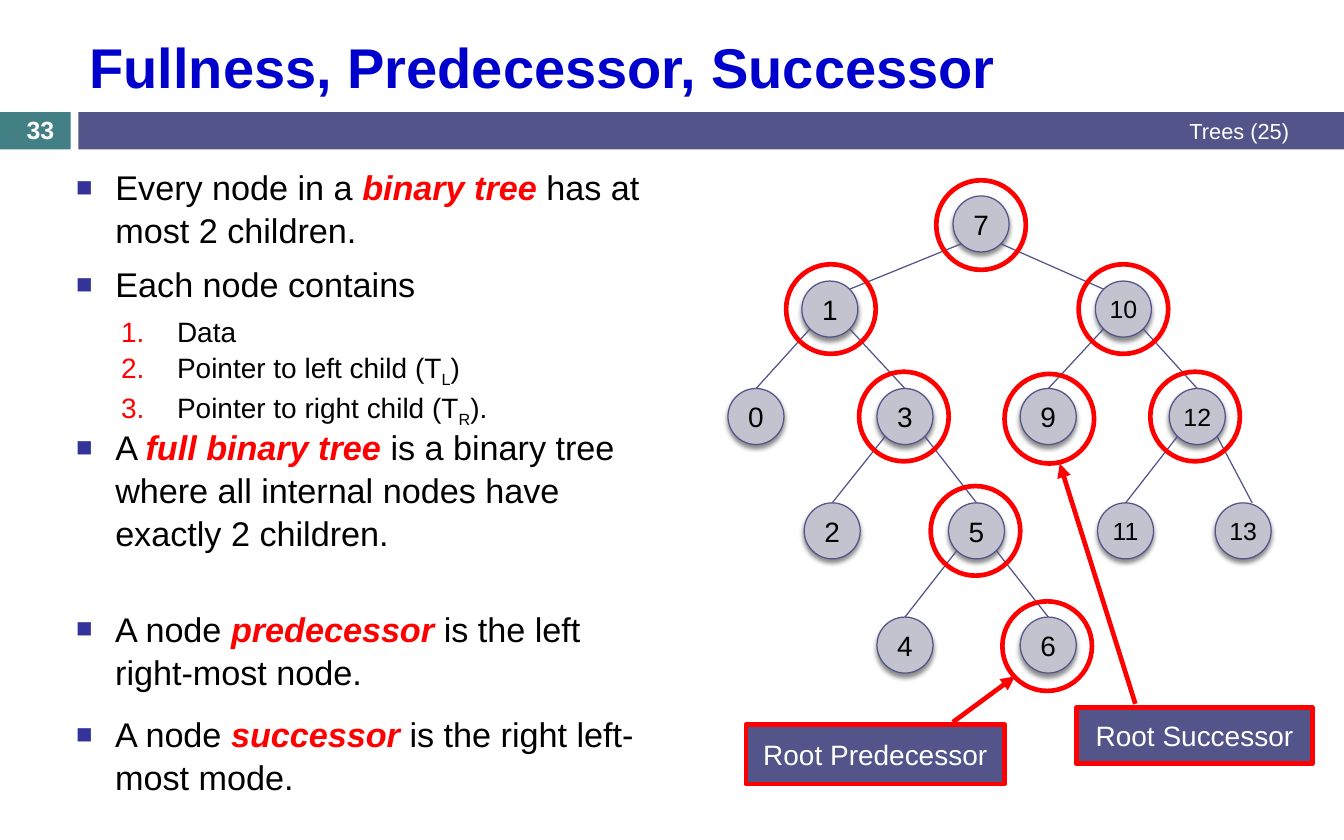
from dataclasses import dataclass
from math import sqrt
from typing import NamedTuple, Optional

from lxml.etree import SubElement
from pptx import Presentation
from pptx.dml.color import RGBColor
from pptx.enum.shapes import MSO_CONNECTOR, MSO_SHAPE
from pptx.enum.text import MSO_ANCHOR, MSO_AUTO_SIZE, PP_ALIGN
from pptx.oxml.ns import qn
from pptx.util import Pt


@dataclass(frozen=True)
class Theme:
    font: str = "Arial"
    title: str = "0000CC"
    ink: str = "000000"
    white: str = "FFFFFF"
    red: str = "FF0000"
    bar: str = "53548A"
    teal: str = "438086"
    node: str = "C3C3CF"
    bullet: str = "333399"
    head: int = 36
    body: int = 22
    sub: int = 18
    small: int = 16
    foot: int = 14
    thin: float = 0.79
    thick: float = 3


class Box(NamedTuple):
    x: float
    y: float
    w: float
    h: float


class Node(NamedTuple):
    label: str
    x: float  # centre
    row: int
    up: Optional[str] = None  # parent label
    aim: tuple = (0, 0)  # edge end, from the top of the node
    ring: Optional[tuple] = None  # ring centre, from the node centre


class Item(NamedTuple):
    runs: tuple  # (text, style) pairs
    level: int = 0
    gap: float = 7


class Call(NamedTuple):
    text: str
    box: Box
    adjust: tuple


T = Theme()
SIZE, RING = 36, 57.6
SLANT = SIZE / 2 / sqrt(2)  # 45 degree point of a node
ROWS = (144, 198.7, 267.8, 341.3, 414.7)

NODES = (
    Node("7", 630.7, 0, ring=(0, 0.7)),
    Node("1", 533.5, 1, "7", (SLANT, 5.2), (0.7, 0)),
    Node("10", 722.2, 1, "7", (-SLANT, 5.2), (0, 0)),
    Node("0", 486, 2, "1"),
    Node("3", 581.8, 2, "1", ring=(-0.7, 0)),
    Node("9", 673.9, 2, "10", ring=(0.7, 1.4)),
    Node("12", 769.7, 2, "10", ring=(-1.4, 0)),
    Node("2", 535, 3, "3"),
    Node("5", 627.8, 3, "3", ring=(-0.7, 0)),
    Node("11", 723.6, 3, "12"),
    Node("13", 799.2, 3, "12", (5.8, 0)),
    Node("4", 581.8, 4, "5"),
    Node("6", 673.9, 4, "5", ring=(-0.7, 0.7)),
)

LIST = (
    Item((("Every node in a ", ""), ("binary tree ", "key"), ("has at most 2 children.", ""))),
    Item((("Each node contains", ""),)),
    Item((("Data", ""),), 1, 5.5),
    Item((("Pointer to left child (T", ""), ("L", "low"), (")", "")), 1, 0),
    Item((("Pointer to right child (T", ""), ("R", "low"), (").", "")), 1, 0),
)

NOTES = (
    (Box(41.8, 269.3, 380.2, 114.5), Item((
        ("A ", ""), ("full binary tree ", "key"),
        ("is a binary tree where all internal nodes have exactly 2 children.", "")))),
    (Box(41.8, 385.9, 384.5, 74.2), Item((
        ("A node ", ""), ("predecessor", "key"), (" is the left right-most node.", "")))),
    (Box(41.8, 453.6, 384.5, 74.2), Item((
        ("A node ", ""), ("successor", "key"), (" is the right left-most mode.", "")))),
)

CALLS = (
    Call("Root Successor", Box(691.9, 455, 151.9, 36), (-0.07, 0.25, -4.36, -0.07)),
    Call("Root Predecessor", Box(479.5, 465.8, 166.3, 38.2), (-0.04, 0.8, -0.81, 1.04)),
)


def apply(obj, values: dict) -> None:
    for name, value in values.items():
        setattr(obj, name, value)


def place(shape, box: Box) -> None:
    apply(shape, dict(zip(("left", "top", "width", "height"), map(Pt, box))))


def write(par, text: str, size: float, color: str, **more) -> object:
    run = par.add_run()
    run.text = text
    apply(run.font, {"name": T.font, "size": Pt(size), "bold": False, **more})
    run.font.color.rgb = RGBColor.from_string(color)
    return run


def label(shape, text: str, size: float, color: str, align=PP_ALIGN.CENTER,
          inset: Optional[float] = None, **more) -> None:
    frame = shape.text_frame
    apply(frame, {"word_wrap": True, "auto_size": MSO_AUTO_SIZE.NONE,
                  "vertical_anchor": MSO_ANCHOR.MIDDLE})
    if inset is not None:
        sides = ("left", "right", "top", "bottom")
        apply(frame, {f"margin_{side}": Pt(inset) for side in sides})
    frame.paragraphs[0].alignment = align
    write(frame.paragraphs[0], text, size, color, **more)


def draw(slide, kind, box: Box, fill: Optional[str] = None,
         line: Optional[str] = None, width: float = 1):
    shape = slide.shapes.add_shape(kind, *map(Pt, box))
    shape.shadow.inherit = False
    if fill:
        shape.fill.solid()
        shape.fill.fore_color.rgb = RGBColor.from_string(fill)
    else:
        shape.fill.background()
    if line:
        shape.line.color.rgb = RGBColor.from_string(line)
        shape.line.width = Pt(width)
    else:
        shape.line.fill.background()
    return shape


def round_box(x: float, y: float, size: float) -> Box:
    return Box(x - size / 2, y - size / 2, size, size)


def draw_node(slide, node: Node) -> None:
    box = round_box(node.x, ROWS[node.row], SIZE)
    shape = draw(slide, MSO_SHAPE.OVAL, box, T.node, T.bar, T.thin)
    effects = shape._element.spPr.find(qn("a:effectLst"))
    shade = SubElement(effects, qn("a:outerShdw"), blurRad=str(Pt(3)),
                       dist=str(Pt(2.4)), dir="5400000", rotWithShape="0")
    color = SubElement(shade, qn("a:srgbClr"), val=T.ink)
    SubElement(color, qn("a:alpha"), val="45000")
    size = T.small if len(node.label) > 1 else T.sub
    label(shape, node.label, size, T.ink, inset=0)


def draw_edge(slide, top: Node, node: Node) -> None:
    side = -1 if node.x < top.x else 1
    ends = (top.x + side * SLANT, ROWS[top.row] + SLANT,
            node.x + node.aim[0], ROWS[node.row] - SIZE / 2 + node.aim[1])
    edge = slide.shapes.add_connector(MSO_CONNECTOR.STRAIGHT, *map(Pt, ends))
    edge.line.color.rgb = RGBColor.from_string(T.bar)
    edge.line.width = Pt(T.thin)
    SubElement(edge._element.spPr, qn("a:effectLst"))


def draw_call(slide, call: Call) -> None:
    shape = draw(slide, MSO_SHAPE.LINE_CALLOUT_1, call.box, T.bar, T.red, T.thick)
    for i, value in enumerate(call.adjust):
        shape.adjustments[i] = value
    SubElement(shape.line._get_or_add_ln(), qn("a:tailEnd"), type="triangle")
    label(shape, call.text, T.sub, T.white)


def fill_list(frame, items: tuple) -> None:
    apply(frame, {"word_wrap": True, "auto_size": MSO_AUTO_SIZE.NONE})
    for i, item in enumerate(items):
        par = frame.add_paragraph() if i else frame.paragraphs[0]
        apply(par, {"level": item.level, "line_spacing": 1.05, "space_before": Pt(item.gap)})
        left, back = ((25.2, 25.2), (64.8, 36))[item.level]
        props = par._p.get_or_add_pPr()
        props.set("marL", str(Pt(left)))
        props.set("indent", str(-Pt(back)))
        tint = SubElement(props, qn("a:buClr"))
        SubElement(tint, qn("a:srgbClr"), val=T.red if item.level else T.bullet)
        if not item.level:
            SubElement(props, qn("a:buSzPct"), val="80000")
        SubElement(props, qn("a:buFont"), typeface=T.font)
        if item.level:
            SubElement(props, qn("a:buAutoNum"), type="arabicPeriod")
        else:
            SubElement(props, qn("a:buChar"), char="■")
        for text, style in item.runs:
            key = style == "key"
            run = write(par, text, T.sub if item.level else T.body,
                        T.red if key else T.ink, bold=key, italic=key)
            if style == "low":
                run.font._element.set("baseline", "-25000")


def main() -> None:
    deck = Presentation()
    apply(deck, {"slide_width": Pt(864), "slide_height": Pt(540)})
    slide = deck.slides.add_slide(deck.slide_layouts[1])
    title, body = slide.placeholders

    # Header band
    draw(slide, MSO_SHAPE.RECTANGLE, Box(0, 72, 45.4, 24), T.teal)
    draw(slide, MSO_SHAPE.RECTANGLE, Box(50.4, 72, 813.6, 24), T.bar)
    place(title, Box(50.4, 13.7, 785.5, 57.6))
    label(title, "Fullness, Predecessor, Successor", T.head, T.title, PP_ALIGN.LEFT, bold=True)
    foot = slide.shapes.add_textbox(*map(Pt, Box(324, 71.3, 511.9, 25.2)))
    label(foot, "Trees (25)", T.foot, T.white, PP_ALIGN.RIGHT)
    page = slide.shapes.add_textbox(*map(Pt, Box(0, 72.7, 51.8, 21.6)))
    label(page, "33", T.small, T.white, bold=True)

    # Lists
    place(body, Box(41.8, 102.2, 391.7, 161.3))
    fill_list(body.text_frame, LIST)
    for box, item in NOTES:
        note = slide.shapes.add_textbox(*map(Pt, box))
        fill_list(note.text_frame, (item,))

    # Tree
    tree = {node.label: node for node in NODES}
    for node in NODES:
        draw_node(slide, node)
    for node in NODES:
        if node.up:
            draw_edge(slide, tree[node.up], node)

    # Rings around inner nodes, and callouts
    for node in NODES:
        if node.ring:
            dx, dy = node.ring
            box = round_box(node.x + dx, ROWS[node.row] + dy, RING)
            draw(slide, MSO_SHAPE.OVAL, box, None, T.red, T.thick)
    for call in CALLS:
        draw_call(slide, call)

    deck.save("out.pptx")


if __name__ == "__main__":
    main()
